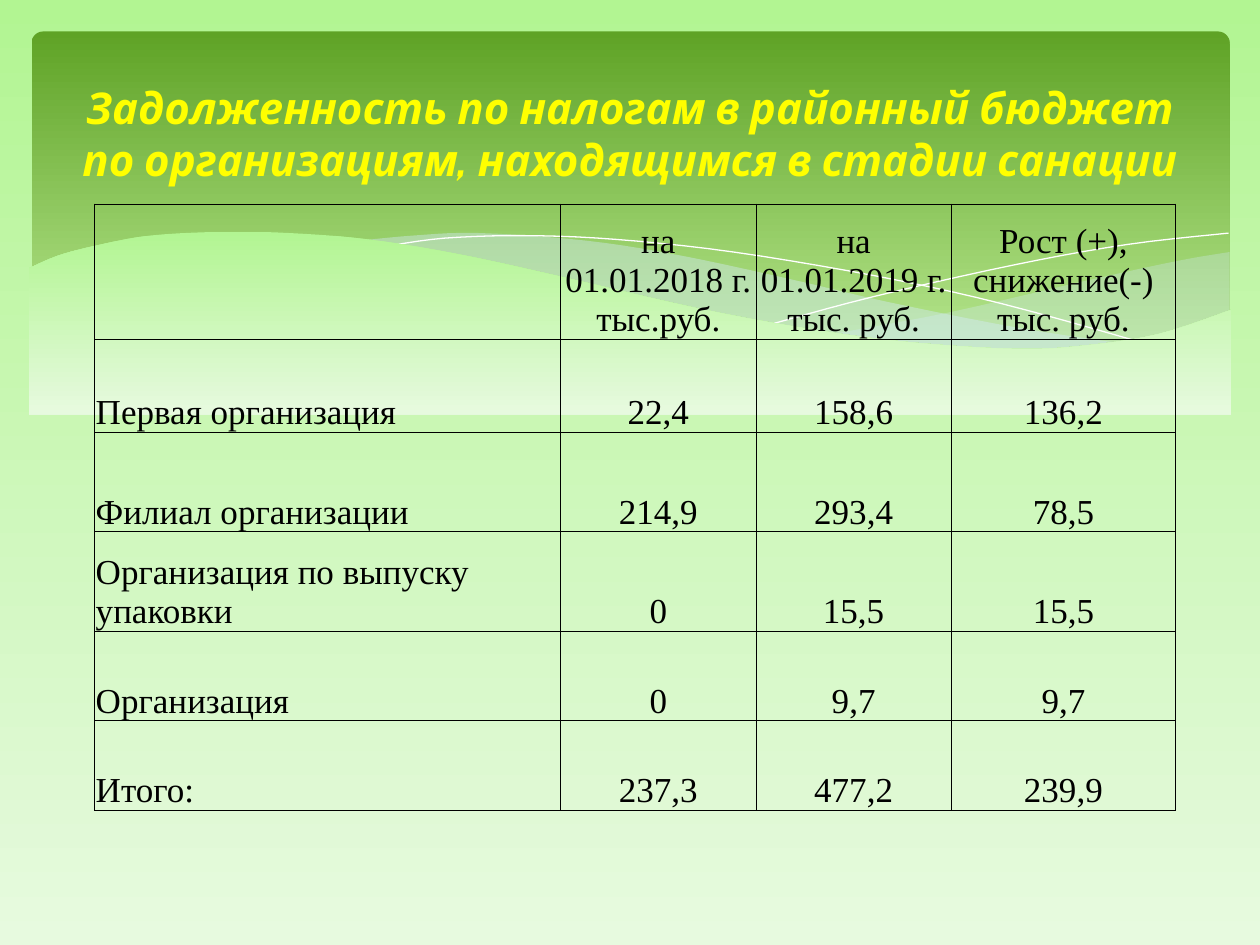
from dataclasses import dataclass

from lxml import etree
from pptx import Presentation
from pptx.dml.color import RGBColor
from pptx.enum import shapes, text
from pptx.oxml import ns
from pptx.util import Inches, Pt

Point = tuple[float, float]
Curve = list[Point]


@dataclass(frozen=True)
class Theme:
    backdrop: tuple[str, str] = ("B2F592", "E7FADF")
    band: tuple[str, str] = ("5FA326", "B2E389")
    ribbon: str = "D6ECFF"
    thread: str = "FFFFFF"
    title: str = "FFFF00"
    ink: str = "000000"
    title_font: str = "Cabin"
    table_font: str = "Times New Roman"
    title_size: int = 25
    table_size: int = 20
    border: float = 0.5


@dataclass(frozen=True)
class Wave:
    edges: list[Curve]
    opacity: int = 100
    kind: str = "ribbon"


THEME = Theme()
WAVES = [
    Wave([
        [(9.76, 2), (9.35, 2.07), (8.61, 2.23), (7.53, 2.48), (6.61, 2.65)],
        [(6.61, 2.65), (7.32, 2.74), (8.03, 2.78), (8.63, 2.75), (9.21, 2.65), (9.76, 2.47)],
    ], opacity=29),
    Wave([
        [(8.93, 2.73), (8.07, 2.6), (7.06, 2.4), (6.29, 2.22), (5.41, 2.03),
         (4.65, 1.91), (3.8, 1.85), (3.28, 1.87), (2.86, 1.91)],
        [(2.86, 1.91), (3.62, 2.03), (4.49, 2.22), (5.66, 2.48), (6.5, 2.64),
         (7.22, 2.74), (8.07, 2.78), (8.93, 2.73)],
    ], opacity=40),
    Wave([[(3.09, 1.95), (3.53, 1.89), (4.16, 1.87), (4.89, 1.9), (5.82, 2),
           (6.95, 2.19), (7.95, 2.41), (9.07, 2.72)]], kind="thread"),
    Wave([[(6.13, 2.57), (6.95, 2.35), (8.06, 2.1), (8.95, 1.94), (9.75, 1.85)]], kind="thread"),
    Wave([
        [(9.77, 2.46), (9.2, 2.65), (8.63, 2.74), (8.09, 2.77), (7.26, 2.72), (6.48, 2.62),
         (5.55, 2.45), (4.47, 2.2), (3.65, 2.02), (2.92, 1.9), (2.3, 1.85), (1.77, 1.84),
         (1.19, 1.87), (0.76, 1.95), (0.46, 2.03), (0.23, 2.13)],
        [(0.23, 3.29), (9.77, 3.29)],
    ], kind="backdrop"),
]
COLUMNS = [3.7, 1.55, 1.55, 1.78]
ROWS = [1.07, 0.74, 0.79, 0.79, 0.71, 0.71]
DEBTS = [
    ["", "на 01.01.2018 г. тыс.руб.", "на 01.01.2019 г. тыс. руб.", "Рост (+), снижение(-) тыс. руб."],
    ["Первая организация", "22,4", "158,6", "136,2"],
    ["Филиал организации", "214,9", "293,4", "78,5"],
    ["Организация по выпуску упаковки", "0", "15,5", "15,5"],
    ["Организация", "0", "9,7", "9,7"],
    ["Итого:", "237,3", "477,2", "239,9"],
]


def smooth(knots: Curve, steps: int = 5) -> Curve:
    padded = [knots[0], *knots, knots[-1]]
    curve = [knots[0]]
    for a, b, c, d in zip(padded, padded[1:], padded[2:], padded[3:]):
        for step in range(1, steps + 1):
            t = step / steps
            x, y = (
                (2 * q + (r - p) * t + (2 * p - 5 * q + 4 * r - s) * t**2
                 + (3 * q - p - 3 * r + s) * t**3) / 2
                for p, q, r, s in zip(a, b, c, d)
            )
            curve.append((x, y))
    return curve


def shade(fill, colours: tuple[str, str], end: float = 1) -> None:
    fill.gradient()
    fill.gradient_angle = 270
    for stop, colour, position in zip(fill.gradient_stops, colours, (0, end)):
        stop.color.rgb = RGBColor.from_string(colour)
        stop.position = position


def draw_band(page) -> None:
    band = page.shapes.add_shape(
        shapes.MSO_SHAPE.ROUNDED_RECTANGLE, Inches(0.25), Inches(0.25), Inches(9.51), Inches(2.7)
    )
    band.adjustments[0] = 0.034
    band.shadow.inherit = False
    band.line.fill.background()
    shade(band.fill, THEME.band, 0.9)


def draw_wave(page, wave: Wave) -> None:
    points = [
        (Inches(x), Inches(y))
        for edge in wave.edges
        for x, y in (smooth(edge) if len(edge) > 2 else edge)
    ]
    builder = page.shapes.build_freeform(*points[0])
    builder.add_line_segments(points[1:], close=wave.kind != "thread")
    shape = builder.convert_to_shape()
    shape.shadow.inherit = False
    if wave.kind == "thread":
        shape.fill.background()
        shape.line.color.rgb = RGBColor.from_string(THEME.thread)
        shape.line.width = Pt(0)
        return
    shape.line.fill.background()
    if wave.kind == "backdrop":
        shade(shape.fill, THEME.backdrop)
        return
    shape.fill.solid()
    shape.fill.fore_color.rgb = RGBColor.from_string(THEME.ribbon)
    colour = shape.element.spPr.find(f"{ns.qn('a:solidFill')}/{ns.qn('a:srgbClr')}")
    etree.SubElement(colour, ns.qn("a:alpha"), val=str(wave.opacity * 1000))


def write_title(page) -> None:
    title = page.shapes.title
    title.element.getparent().append(title.element)
    title.left, title.top, title.width, title.height = map(Inches, (0.5, 0.37, 9, 1.37))
    frame = title.text_frame
    frame.text = (
        "Задолженность по налогам в районный бюджет по организациям, находящимся в стадии санации"
    )
    frame.word_wrap = True
    frame.auto_size = text.MSO_AUTO_SIZE.NONE
    frame.vertical_anchor = text.MSO_ANCHOR.MIDDLE
    para = frame.paragraphs[0]
    para.alignment = text.PP_ALIGN.CENTER
    font = para.runs[0].font
    font.name, font.size = THEME.title_font, Pt(THEME.title_size)
    font.bold = font.italic = True
    font.color.rgb = RGBColor.from_string(THEME.title)


def outline_cell(cell) -> None:
    properties = cell._tc.get_or_add_tcPr()
    for place, side in enumerate(("lnL", "lnR", "lnT", "lnB")):
        line = etree.Element(ns.qn(f"a:{side}"), w=str(Pt(THEME.border)))
        fill = etree.SubElement(line, ns.qn("a:solidFill"))
        etree.SubElement(fill, ns.qn("a:srgbClr"), val=THEME.ink)
        properties.insert(place, line)


def write_cell(cell, content: str, centred: bool) -> None:
    cell.fill.background()
    outline_cell(cell)
    cell.vertical_anchor = text.MSO_ANCHOR.BOTTOM
    cell.margin_left = cell.margin_right = cell.margin_top = Inches(0.01)
    cell.margin_bottom = 0
    cell.text_frame.text = content
    para = cell.text_frame.paragraphs[0]
    para.alignment = text.PP_ALIGN.CENTER if centred else text.PP_ALIGN.LEFT
    for span in para.runs:
        span.font.name, span.font.size = THEME.table_font, Pt(THEME.table_size)
        span.font.color.rgb = RGBColor.from_string(THEME.ink)


def draw_table(page) -> None:
    table = page.shapes.add_table(
        len(ROWS), len(COLUMNS), Inches(0.75), Inches(1.62), Inches(sum(COLUMNS)), Inches(sum(ROWS))
    ).table
    table.first_row = table.horz_banding = False
    for column, width in zip(table.columns, COLUMNS):
        column.width = Inches(width)
    for row, height, debts in zip(table.rows, ROWS, DEBTS):
        row.height = Inches(height)
        for number, (cell, content) in enumerate(zip(row.cells, debts)):
            write_cell(cell, content, centred=number > 0)


def main() -> None:
    deck = Presentation()
    deck.slide_width, deck.slide_height = Inches(10), Inches(7.5)
    page = deck.slides.add_slide(deck.slide_layouts[5])
    shade(page.background.fill, THEME.backdrop)
    draw_band(page)
    for wave in WAVES:
        draw_wave(page, wave)
    write_title(page)
    draw_table(page)
    deck.save("out.pptx")


if __name__ == "__main__":
    main()
